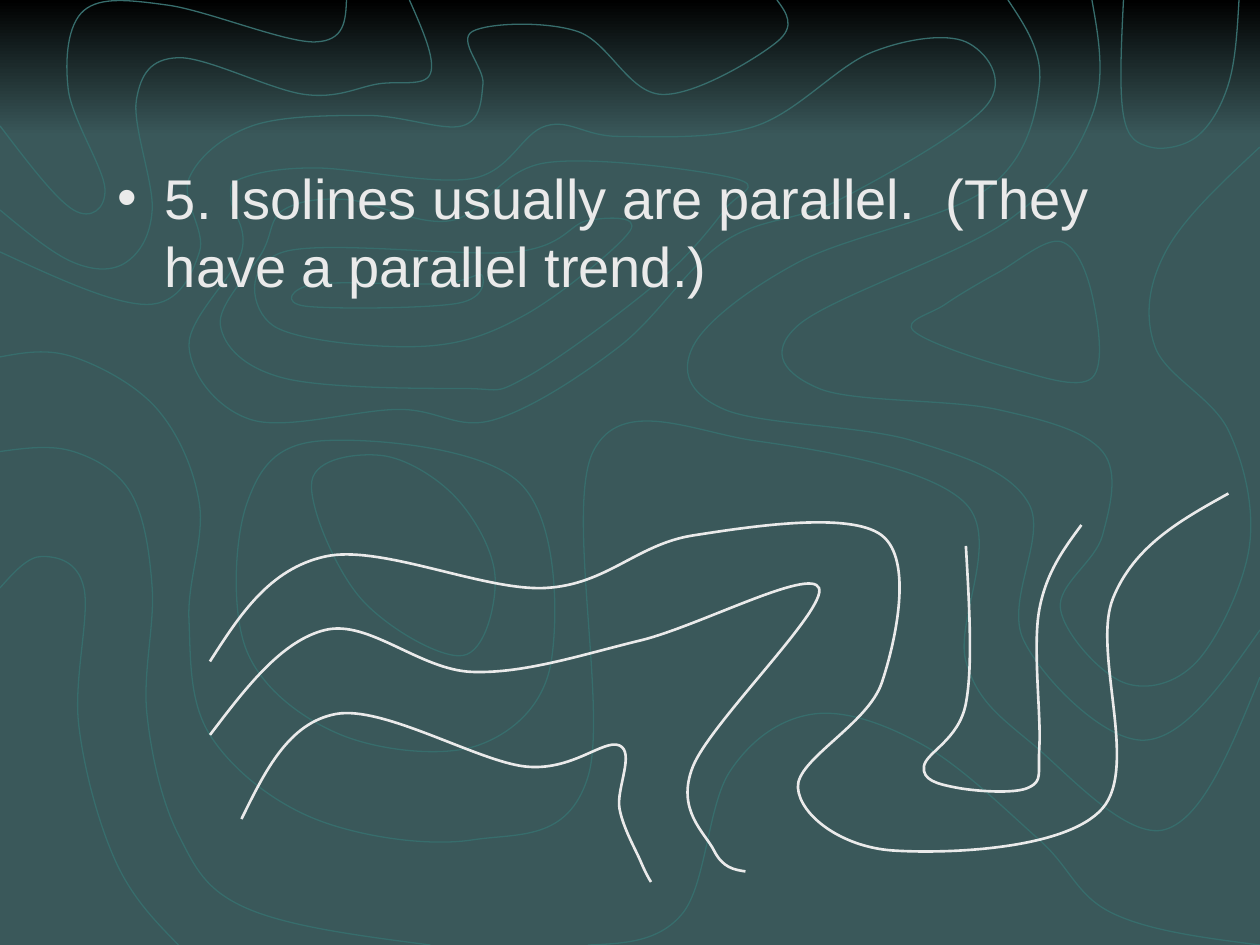
from lxml.etree import SubElement
from pptx import Presentation
from pptx.dml.color import RGBColor
from pptx.enum.shapes import MSO_SHAPE
from pptx.enum.text import MSO_ANCHOR, MSO_AUTO_SIZE
from pptx.oxml.ns import qn
from pptx.util import Pt

TEXT = "5. Isolines usually are parallel.  (They have a parallel trend.)"
BACK, CONTOUR, LIGHT, BLACK = "3A585A", "376D6C", "EAEAEA", "000000"
GRID = 60  # one grid step of 6 points, in tenths of a point

# Points that each smooth curve passes through, in grid steps
OPEN_CONTOURS = [
    [(0, 24), (14, 29), (19, 24), (18, 17), (24, 12), (35, 11), (44, 12),
     (46, 8), (45, 3), (55, 3), (63, 9), (74, 4), (74, 0)],
    [(0, 20), (7, 25), (12, 25), (14.5, 20), (13, 9.5), (17, 5.5), (29, 9),
     (36, 8), (41, 7), (39, 0)],
    [(0, 12), (7, 20), (10, 18), (6.5, 8.5), (8, 1), (16, 0.5), (30, 4), (33, 0)],
    [(0, 34), (7, 34), (15, 39), (19, 48), (18, 59), (20, 70), (30, 78),
     (45, 80), (56, 74), (56.5, 43), (72, 42), (92, 48), (92, 63), (98.5, 71),
     (111, 79), (120, 64.5)],
    [(96, 0), (99, 8), (94, 18), (76, 25), (66, 33), (69, 39), (87, 42),
     (98, 48), (97.5, 61), (109, 70.5), (120, 60)],
    [(104, 0), (104, 11), (96, 21), (76, 31), (78, 37), (95, 39), (105, 43),
     (105, 51), (101, 58), (107, 65), (114, 63), (119, 52), (117, 41),
     (110, 33), (111, 24), (120, 14)],
    [(107, 0), (107, 11), (109.5, 14), (114, 13), (117, 8), (118, 0)],
    [(0, 43), (7, 43), (12.5, 47), (14.5, 56), (14, 68), (17, 79.5),
     (23.5, 86.5), (41, 90)],
    [(0, 56), (4, 53), (8, 56), (7.5, 69), (11, 82), (17, 90)],
    [(56, 90), (65, 87), (69.5, 73.5), (77.5, 68), (88, 71), (99, 80),
     (106, 87), (120, 90)],
]
# Rotation in degrees, then the points
CLOSED_CONTOURS = [
    (0, [(23, 24), (22, 19), (23, 17), (30, 16), (45, 17), (52, 12), (59, 13),
         (72, 12), (83, 5), (92, 4), (94, 10), (80, 19), (69, 23), (59, 33),
         (47, 40), (38, 39), (24, 40), (18, 33)]),
    (0, [(21, 31), (25, 24), (27, 20), (33, 19), (43, 21), (52, 15.5), (70, 17),
         (69, 20), (62.5, 27), (50, 36), (44, 37), (27, 36)]),
    (0, [(26, 31), (27, 24), (49, 24), (56, 21), (60, 22), (50, 30), (40, 33)]),
    (355, [(29, 28.5), (30, 26.5), (42, 27.5), (46, 27), (43.5, 29.5)]),
    (0, [(30.5, 42), (23.5, 48), (23.5, 62), (32.5, 70), (45.5, 71),
         (52.5, 63), (49.5, 46)]),
    (19, [(47.5, 52), (41.5, 46), (33.5, 44.5), (28, 49), (36, 58), (47, 60)]),
    (0, [(104, 28), (101, 23), (95, 26), (90, 29), (87, 31.5), (96, 35), (104, 36)]),
]
ISOLINES = [
    [(20, 63), (31, 53), (52, 56), (66, 51), (84, 51), (84, 65), (76, 75),
     (85, 81), (105, 77), (106, 57), (117, 47)],
    [(20, 70), (31, 60), (45, 64), (61, 61), (78, 56), (66, 73), (68, 81), (71, 83)],
    [(23, 78), (32, 68), (50, 73), (59, 71), (59, 77), (61, 82), (62, 84)],
    [(92, 52), (92, 67), (88, 73), (91, 75), (98, 75), (99, 71), (99, 58), (103, 50)],
]


def rgb(value):
    return RGBColor.from_string(value)


def handle(point, ahead, behind):
    """Control point one sixth of the way along the neighbours' chord."""
    return tuple(p + (a - b) / 6 for p, a, b in zip(point, ahead, behind))


def middle(a, b):
    return tuple((u + v) / 2 for u, v in zip(a, b))


def smooth(points, closed):
    """Start point, then two control points and an end for each segment."""
    n = len(points)
    result = [points[0]]
    for i in range(n if closed else n - 1):
        a, b = points[i], points[(i + 1) % n]
        first = handle(a, b, points[i - 1])
        second = handle(b, a, points[(i + 2) % n])
        if not closed and i == 0:
            first = middle(a, second)
        if not closed and i == n - 2:
            second = middle(first, b)
        result += [first, second, b]
    return [(round(x * GRID), round(y * GRID)) for x, y in result]


def add_curve(s, points, color, width, closed=False, rotation=0):
    start, *rest = smooth(points, closed)
    builder = s.shapes.build_freeform(*start, scale=Pt(0.1))
    builder.add_line_segments(rest, close=closed)
    sp = builder.convert_to_shape()
    # Merge each three straight steps into one Bezier segment
    steps = list(sp._element.iter(qn("a:lnTo")))
    for first, second, end in zip(steps[::3], steps[1::3], steps[2::3]):
        first.tag = qn("a:cubicBezTo")
        for step in (second, end):
            first.append(step[0])
            step.getparent().remove(step)
    sp.shadow.inherit = False
    sp.fill.background()
    sp.line.color.rgb = rgb(color)
    sp.line.width = Pt(width)
    sp.rotation = rotation


prs = Presentation()
prs.slide_width, prs.slide_height = Pt(720), Pt(540)
s = prs.slides.add_slide(prs.slide_layouts[1])
s.background.fill.solid()
s.background.fill.fore_color.rgb = rgb(BACK)
title, body = s.placeholders
title._element.getparent().remove(title._element)

band = s.shapes.add_shape(MSO_SHAPE.RECTANGLE, 0, 0, Pt(720), Pt(77.76))
band.shadow.inherit = False
band.line.fill.background()
band.fill.gradient()
band.fill.gradient_angle = 270
for stop, color in zip(band.fill.gradient_stops, (BLACK, BACK)):
    stop.color.rgb = rgb(color)

for points in OPEN_CONTOURS:
    add_curve(s, points, CONTOUR, 0.75)
for rotation, points in CLOSED_CONTOURS:
    add_curve(s, points, CONTOUR, 0.75, True, rotation)

s.shapes._spTree.append(body._element)  # text goes above the contours
body.left, body.top, body.width, body.height = Pt(60), Pt(90), Pt(612), Pt(88.5)
tf = body.text_frame
tf.text = TEXT
tf.word_wrap = True
tf.auto_size = MSO_AUTO_SIZE.NONE
tf.vertical_anchor = MSO_ANCHOR.TOP
p = tf.paragraphs[0]
p.space_before = Pt(0)
pPr = p._p.get_or_add_pPr()
pPr.set("marL", str(Pt(27)))
pPr.set("indent", str(-Pt(27)))
SubElement(SubElement(pPr, qn("a:buClr")), qn("a:srgbClr")).set("val", LIGHT)
SubElement(pPr, qn("a:buChar")).set("char", "•")
font = p.runs[0].font
font.name, font.size, font.color.rgb = "Arial", Pt(32), rgb(LIGHT)

for points in ISOLINES:
    add_curve(s, points, LIGHT, 1.5)

prs.save("out.pptx")
